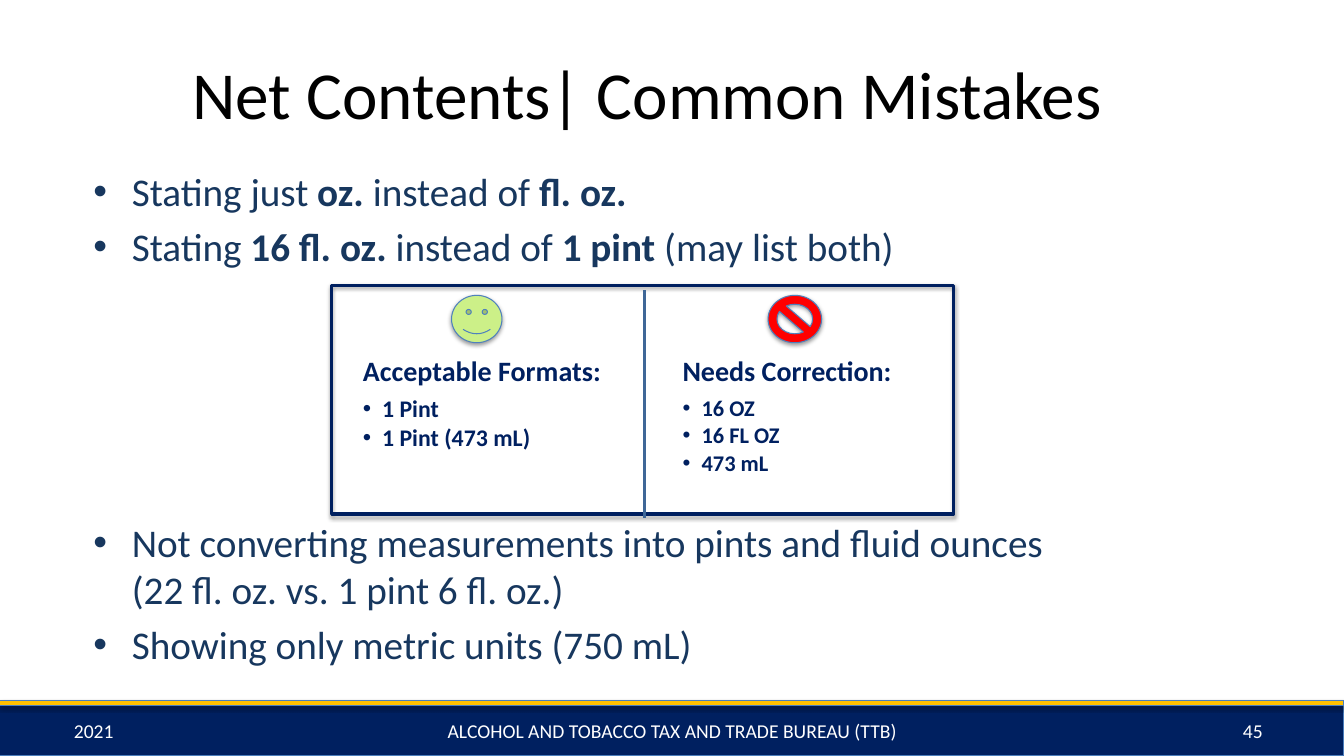
from lxml.etree import SubElement as Sub
from pptx import Presentation
from pptx.dml.color import RGBColor
from pptx.enum.shapes import MSO_CONNECTOR as Conn, MSO_SHAPE as Shape
from pptx.enum.text import MSO_ANCHOR as Anchor, PP_ALIGN as Align
from pptx.oxml.ns import qn
from pptx.util import Inches, Pt

NAVY, BLUE, WHITE = "002060", "17375E", "FFFFFF"
EDGE, RIM = "4B7EBC", "4F81BD"

# Places are left, top, width, height in percent of the slide
TITLE = ("Net Contents| Common Mistakes", (13.57, 6.67, 81.45, 11.07))
POINTS = [
    ((6.22, 21.47, 83.4, 46.4),
     ["Stating just *oz. *instead of *fl. oz.",
      "Stating *16 fl. oz. *instead of *1 pint *(may list both)"]),
    ((6.22, 67.87, 83.4, 21.47),
     ["Not converting measurements into pints and fluid ounces\v"
      "(22 fl. oz. vs. 1 pint 6 fl. oz.)",
      "Showing only metric units (750 mL)"]),
]
PANELS = [
    ((26.7, 46.67, 20.63, 21.2), "Acceptable Formats:", 17,
     ["1 Pint", "1 Pint (473 mL)"]),
    ((50.48, 46.67, 20.1, 21.2), "Needs Correction:", 16,
     ["16 OZ", "16 FL OZ", "473 mL"]),
]
FOOT = [("2021", 0, 13.95),
        ("ALCOHOL AND TOBACCO TAX AND TRADE BUREAU (TTB)", 26.7, 46.65),
        ("45", 86.55, 13.35)]
BANDS = [(Shape.RECTANGLE, (0, 92.67, 100, 7.33), NAVY, EDGE, 0.75, 35),
         (Shape.RECTANGLE, (0, 92.67, 100, 0.67), "FFC000", EDGE, 0.75, 35)]
MARKS = [(Shape.RECTANGLE, (24.68, 37.73, 46.28, 30.27), None, NAVY, 2.25, 38),
         (Shape.SMILEY_FACE, (33.6, 39.07, 3.75, 6.27), "CCF088", RIM, 0.75, 38),
         (Shape.NO_SYMBOL, (57.15, 39.07, 3.98, 6.27), "FF0000", RIM, 0.75, 38)]
RULE = (47.93, 38.4, 47.93, 68.53)

deck = Presentation()
deck.slide_width, deck.slide_height = Inches(13.33), Inches(7.5)
slide = deck.slides.add_slide(deck.slide_layouts[6])


def hue(code):
    """Turn a hex string into a colour."""
    return RGBColor.from_string(code)


def place(spot):
    """Turn percent pairs into slide lengths."""
    sides = (deck.slide_width, deck.slide_height) * 2
    return [round(part * side / 100) for part, side in zip(spot, sides)]


def draw(kind, spot, fill, edge, width, dark):
    """Add a preset shape with a soft shadow below it."""
    item = slide.shapes.add_shape(kind, *place(spot))
    item.shadow.inherit = False
    if fill:
        item.fill.solid()
        item.fill.fore_color.rgb = hue(fill)
    else:
        item.fill.background()
    item.line.color.rgb = hue(edge)
    item.line.width = Pt(width)
    glow = Sub(item.element.spPr.find(qn("a:effectLst")), qn("a:outerShdw"),
               blurRad=str(Pt(3.1)), dist=str(Pt(1.7)), dir="5400000",
               rotWithShape="0")
    tint = Sub(glow, qn("a:srgbClr"), val="000000")
    Sub(tint, qn("a:alpha"), val=str(dark * 1000))


def box(spot, anchor=Anchor.TOP, inset=None):
    """Add a wrapping text box and return its frame."""
    frame = slide.shapes.add_textbox(*place(spot)).text_frame
    frame.word_wrap = True
    frame.vertical_anchor = anchor
    if inset:
        frame.margin_left = frame.margin_right = Inches(inset)
        frame.margin_top = frame.margin_bottom = Inches(inset)
    return frame


def style(para, size, color, bold=False):
    """Format every run of a paragraph."""
    for run in para.runs:
        font = run.font
        font.name, font.size = "Calibri", Pt(size)
        font.color.rgb = hue(color)
        font.bold = bold


def bullet(para, dent):
    """Give a paragraph a round bullet and a hanging indent."""
    props = para._p.get_or_add_pPr()
    props.set("marL", str(Inches(dent)))
    props.set("indent", str(-Inches(dent)))
    Sub(props, qn("a:buFont"), typeface="Arial")
    Sub(props, qn("a:buChar"), char="•")


def label(text, spot, size, color, align):
    """Add one line of text, centred in height."""
    frame = box(spot, Anchor.MIDDLE)
    frame.text = text
    para = frame.paragraphs[0]
    para.alignment = align
    style(para, size, color)


def points(spot, lines):
    """Add large bullets; stars switch bold on and off."""
    frame = box(spot)
    for row, line in enumerate(lines):
        para = frame.add_paragraph() if row else frame.paragraphs[0]
        para.text, *rest = line.split("*")
        for part in rest:
            para.add_run().text = part
        style(para, 28, BLUE)
        for run in para.runs[1::2] if rest else ():
            run.font.bold = True
        para.space_before = Pt(5.6 if row else 0)
        bullet(para, 0.38)


def panel(spot, head, size, items):
    """Add a bold heading with small bullets."""
    frame = box(spot, inset=0.04)
    frame.text = "\n".join([head, *items])
    for row, para in enumerate(frame.paragraphs):
        para.line_spacing = 0.9
        para.space_after = Pt(size * 0.15 if row else 7)
        style(para, size if row else 20, NAVY, True)
        if row:
            bullet(para, 0.19)


def main():
    """Build the slide and save it."""
    for band in BANDS:
        draw(*band)
    label(*TITLE, 48, "000000", Align.LEFT)
    for text, left, width in FOOT:
        label(text, (left, 94, width, 5.33), 14, WHITE, Align.CENTER)
    for mark in MARKS:
        draw(*mark)
    for part in PANELS:
        panel(*part)
    rule = slide.shapes.add_connector(Conn.STRAIGHT, *place(RULE))
    rule.line.color.rgb = hue("3F6797")
    rule.line.width = Pt(2)
    Sub(rule.element.spPr, qn("a:effectLst"))
    for part in POINTS:
        points(*part)
    deck.save("out.pptx")


if __name__ == "__main__":
    main()
